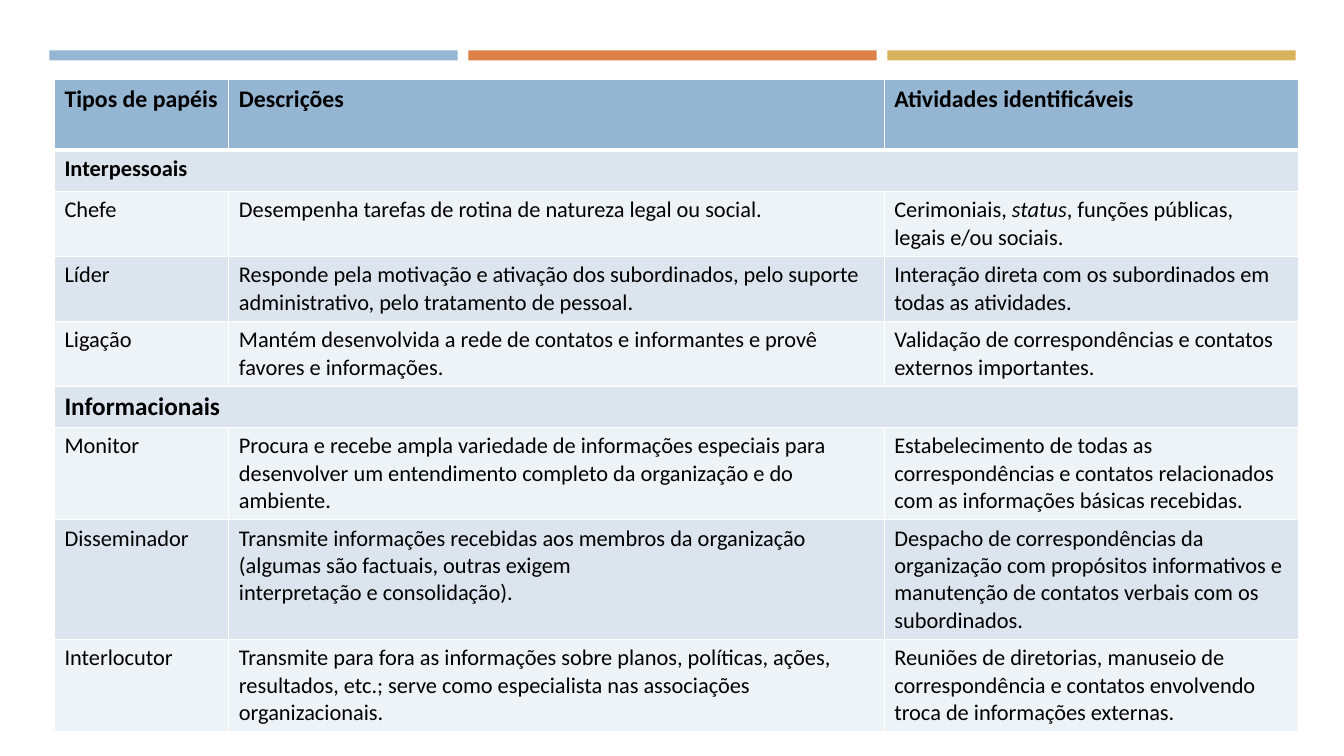
from lxml import etree
from pptx import Presentation
from pptx.dml.color import RGBColor
from pptx.enum import shapes
from pptx.oxml import ns
from pptx.util import Inches, Pt

BLUE = RGBColor(0x94, 0xB6, 0xD2)
ORANGE = RGBColor(0xDD, 0x80, 0x47)
GOLD = RGBColor(0xD8, 0xB2, 0x5C)
PALE = RGBColor(0xEE, 0xF3, 0xF7)
LIGHT = RGBColor(0xDC, 0xE5, 0xEE)
BLACK = RGBColor(0, 0, 0)
WHITE = RGBColor(0xFF, 0xFF, 0xFF)

# Line breaks separate paragraphs; asterisks enclose italics.
# A row with a single entry is a section heading across all columns.
ROLES = [
    ("Tipos de papéis", "Descrições", "Atividades identificáveis"),
    ("Interpessoais",),
    ("Chefe",
     "Desempenha tarefas de rotina de natureza legal ou social.",
     "Cerimoniais, *status*, funções públicas, legais e/ou sociais."),
    ("Líder",
     "Responde pela motivação e ativação dos subordinados, pelo suporte\n"
     "administrativo, pelo tratamento de pessoal.",
     "Interação direta com os subordinados em todas as atividades."),
    ("Ligação",
     "Mantém desenvolvida a rede de contatos e informantes e provê favores e informações.",
     "Validação de correspondências e contatos externos importantes."),
    ("Informacionais",),
    ("Monitor",
     "Procura e recebe ampla variedade de informações especiais para desenvolver um "
     "entendimento completo da organização e do ambiente.",
     "Estabelecimento de todas as correspondências e contatos relacionados com as "
     "informações básicas recebidas."),
    ("Disseminador",
     "Transmite informações recebidas aos membros da organização (algumas são factuais, "
     "outras exigem\ninterpretação e consolidação).",
     "Despacho de correspondências da organização com propósitos informativos e "
     "manutenção de contatos verbais com os\nsubordinados."),
    ("Interlocutor",
     "Transmite para fora as informações sobre planos, políticas, ações, resultados, etc.; "
     "serve como especialista nas associações\norganizacionais.",
     "Reuniões de diretorias, manuseio de correspondência e contatos envolvendo troca de "
     "informações externas."),
]
COLUMN_WIDTHS = (1.73, 6.5, 4.11)
ROW_HEIGHTS = (0.7, 0.41, 0.63, 0.63, 0.63, 0.41, 0.9, 1.17, 0.9)
BODY_SIZE = 16
SPECIAL_SIZES = {0: 17, 5: 18}
TABLE_LEFT, TABLE_TOP = 0.54, 0.79

STRIPES = (BLUE, ORANGE, GOLD)
STRIPE_LEFT, STRIPE_TOP = 0.49, 0.5
STRIPE_WIDTH, STRIPE_HEIGHT, STRIPE_STEP = 4.05, 0.1, 4.155


def add_stripes(slide):
    for index, color in enumerate(STRIPES):
        stripe = slide.shapes.add_shape(
            shapes.MSO_SHAPE.RECTANGLE,
            Inches(STRIPE_LEFT + index * STRIPE_STEP), Inches(STRIPE_TOP),
            Inches(STRIPE_WIDTH), Inches(STRIPE_HEIGHT))
        stripe.shadow.inherit = False
        stripe.fill.solid()
        stripe.fill.fore_color.rgb = color
        stripe.line.fill.background()


def set_borders(cell, widths):
    """Draw white borders; widths maps a side (L, R, T, B) to points."""
    properties = cell._tc.get_or_add_tcPr()
    for position, (side, width) in enumerate(widths.items()):
        border = etree.Element(ns.qn(f"a:ln{side}"), w=str(Pt(width)))
        fill = etree.SubElement(border, ns.qn("a:solidFill"))
        etree.SubElement(fill, ns.qn("a:srgbClr"), val=str(WHITE))
        properties.insert(position, border)


def write_cell(cell, content, size, bold):
    cell.text_frame.text = content
    for paragraph, line in zip(cell.text_frame.paragraphs, content.split("\n")):
        paragraph.clear()
        for index, part in enumerate(line.split("*")):
            run = paragraph.add_run()
            run.text = part
            run.font.color.rgb = BLACK
            look = {"name": "Calibri", "size": Pt(size), "bold": bold, "italic": index % 2 == 1}
            for attribute, value in look.items():
                setattr(run.font, attribute, value)


def add_roles(slide):
    table = slide.shapes.add_table(
        len(ROLES), len(COLUMN_WIDTHS), Inches(TABLE_LEFT), Inches(TABLE_TOP),
        Inches(sum(COLUMN_WIDTHS)), Inches(sum(ROW_HEIGHTS))).table
    for column, width in zip(table.columns, COLUMN_WIDTHS):
        column.width = Inches(width)
    for index, (entries, height) in enumerate(zip(ROLES, ROW_HEIGHTS)):
        table.rows[index].height = Inches(height)
        heading = len(entries) == 1
        if heading:
            table.cell(index, 0).merge(table.cell(index, len(COLUMN_WIDTHS) - 1))
        row_fill = BLUE if index == 0 else LIGHT if index % 2 else PALE
        borders = {"L": 1, "R": 1, "T": 3 if index == 1 else 1, "B": 3 if index == 0 else 1}
        for column, content in enumerate(entries):
            cell = table.cell(index, column)
            write_cell(cell, content, SPECIAL_SIZES.get(index, BODY_SIZE), heading or index == 0)
            cell.fill.solid()
            cell.fill.fore_color.rgb = row_fill
            set_borders(cell, borders)


def main():
    deck = Presentation()
    deck.slide_width, deck.slide_height = Inches(13.33), Inches(7.5)
    slide = deck.slides.add_slide(deck.slide_layouts[6])
    add_stripes(slide)
    add_roles(slide)
    deck.save("out.pptx")


if __name__ == "__main__":
    main()
